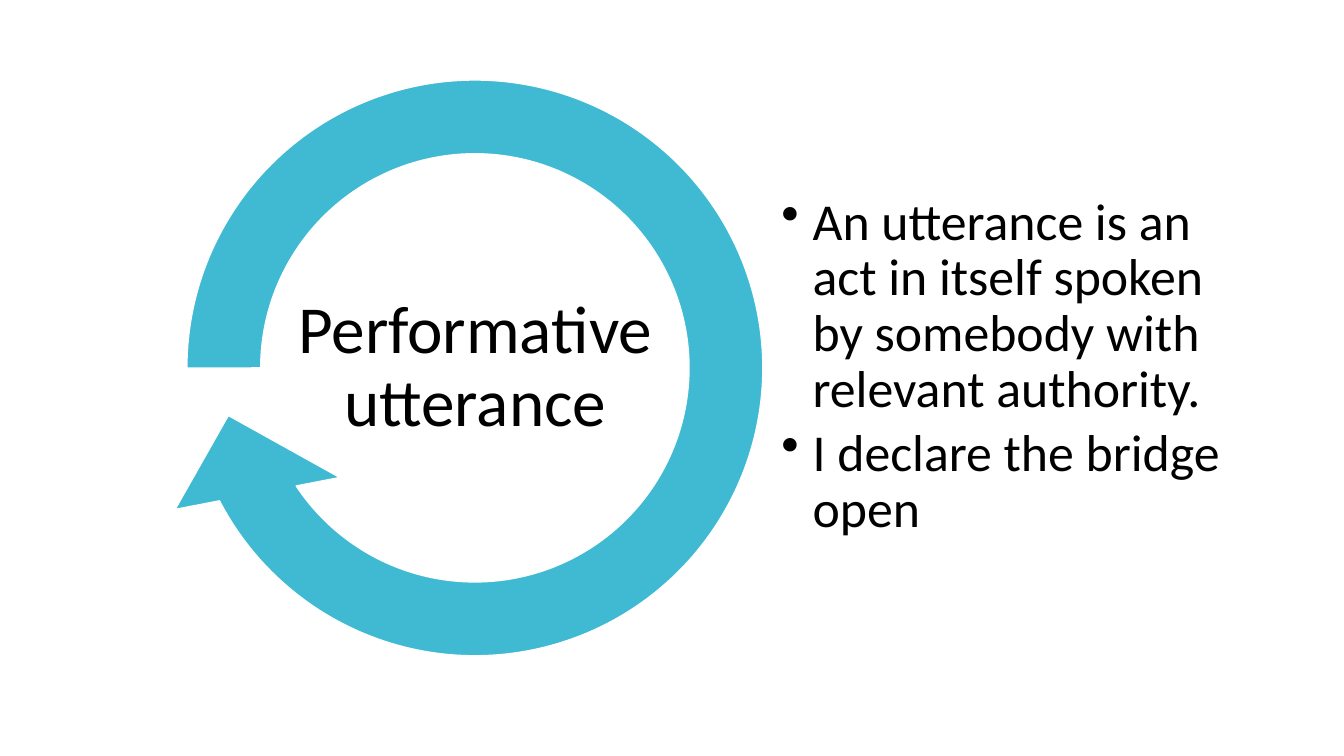
from pptx import Presentation
from pptx.dml.color import RGBColor
from pptx.enum.shapes import MSO_SHAPE
from pptx.enum.text import MSO_ANCHOR, PP_ALIGN
from pptx.oxml.xmlchemy import OxmlElement
from pptx.util import Inches, Pt

TEAL = RGBColor(0x40, 0xBA, 0xD2)
WHITE = RGBColor(0xFF, 0xFF, 0xFF)
BLACK = RGBColor(0x00, 0x00, 0x00)

# Adjustment units per degree in the shape's angle settings
DEGREE = 0.6


class CyclePage:
    font = "Calibri"
    inset = Inches(0.03)
    bullet_indent = Inches(0.31)
    line_spacing = 0.9

    def __init__(self, deck):
        self.page = deck.slides.add_slide(deck.slide_layouts[6])

    def circular_arrow(self, left, top, size):
        arrow = self.page.shapes.add_shape(
            MSO_SHAPE.CIRCULAR_ARROW,
            Inches(left), Inches(top), Inches(size), Inches(size))
        arrow.shadow.inherit = False
        arrow.fill.solid()
        arrow.fill.fore_color.rgb = TEAL
        arrow.line.color.rgb = WHITE
        arrow.line.width = Pt(0.85)
        # Band thickness, head angle, end angle, start angle, head width
        settings = (0.11, 19.04 * DEGREE, 150 * DEGREE, 180 * DEGREE, 0.125)
        for index, value in enumerate(settings):
            arrow.adjustments[index] = value

    def text(self, left, top, width, height, lines, size, space_after, bulleted=False):
        box = self.page.shapes.add_textbox(
            Inches(left), Inches(top), Inches(width), Inches(height))
        frame = box.text_frame
        frame.word_wrap = True
        frame.vertical_anchor = MSO_ANCHOR.MIDDLE
        frame.margin_left = frame.margin_right = self.inset
        frame.margin_top = frame.margin_bottom = self.inset
        frame.text = "\n".join(lines)
        for para in frame.paragraphs:
            para.line_spacing = self.line_spacing
            para.space_after = Pt(size * space_after)
            if bulleted:
                self.bullet(para)
            else:
                para.alignment = PP_ALIGN.CENTER
            for span in para.runs:
                span.font.name = self.font
                span.font.size = Pt(size)
                span.font.color.rgb = BLACK

    def bullet(self, para):
        properties = para._p.get_or_add_pPr()
        properties.set("marL", str(self.bullet_indent))
        properties.set("indent", str(-self.bullet_indent))
        mark = OxmlElement("a:buChar")
        mark.set("char", "•")
        properties.append(mark)


def main():
    deck = Presentation()
    deck.slide_width = Inches(13.33)
    deck.slide_height = Inches(7.5)

    cycle = CyclePage(deck)
    cycle.circular_arrow(1.39, 0.33, 6.64)
    cycle.text(7.72, 1.85, 4.62, 3.58, [
        "An utterance is an act in itself spoken by somebody with relevant authority.",
        "I declare the bridge open",
    ], size=37, space_after=0.15, bulleted=True)
    cycle.text(2.86, 2.73, 3.71, 1.85, ["Performative utterance"],
               size=48, space_after=0.35)

    deck.save("out.pptx")


if __name__ == "__main__":
    main()
